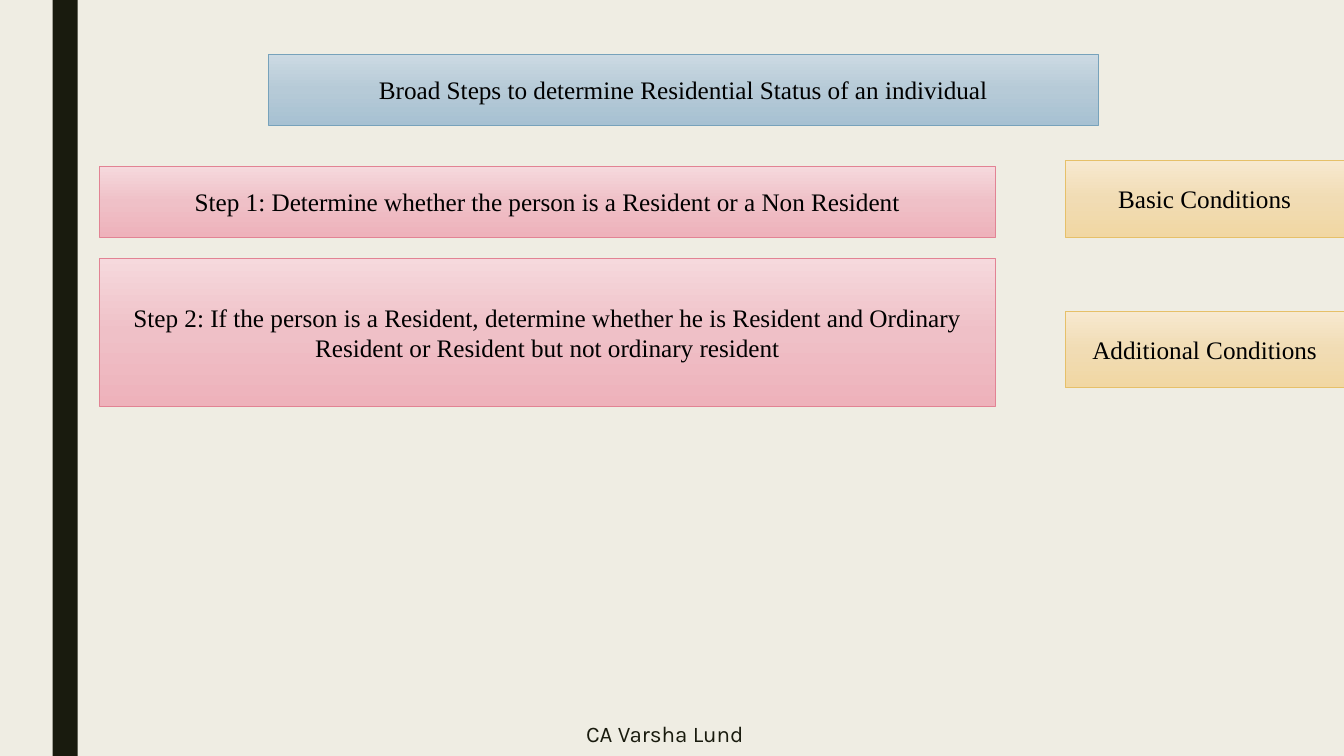
import copy

import pptx
import pptx.dml.color
import pptx.enum.shapes
import pptx.enum.text
import pptx.util
from pptx.oxml.ns import qn

Pt = pptx.util.Pt

SLIDE_SIZE = (960, 540)
BACKGROUND = "EFEDE3"
DARK = "191B0E"

# Three gradient colours from top to bottom, then the outline
BLUE = ("CCDAE3", "B6CAD7", "A7C1D2", "77A2BB")
PINK = ("F6D9DD", "EFC0C7", "EEB2BB", "E28394")
GOLD = ("F7E9D0", "F1DCB4", "F1D7A3", "E6C069")

STEP_LEFT, STEP_WIDTH = 70.75, 640.5
CONDITION_LEFT, CONDITION_HEIGHT = 761, 54.75
CONDITION_WIDTH = SLIDE_SIZE[0] - CONDITION_LEFT

SIDE_BAR = (37.5, 0, 18, SLIDE_SIZE[1])
BOXES = [
    ("Broad Steps to determine Residential Status of an individual",
     (191.5, 38.75, 593.25, 50.75), BLUE),
    ("Step 1: Determine whether the person is a Resident or a Non Resident",
     (STEP_LEFT, 118.75, STEP_WIDTH, 50.75), PINK),
    ("Step 2: If the person is a Resident, determine whether he is Resident "
     "and Ordinary Resident or Resident but not ordinary resident",
     (STEP_LEFT, 184.5, STEP_WIDTH, 105.75), PINK),
    ("Basic Conditions",
     (CONDITION_LEFT, 114.5, CONDITION_WIDTH, CONDITION_HEIGHT), GOLD),
    ("Additional Conditions",
     (CONDITION_LEFT, 222.25, CONDITION_WIDTH, CONDITION_HEIGHT), GOLD),
]
FOOTER = ("CA Varsha Lund", (227.5, 508.5, 494.75, 31.5))

BOX_FONT = {"name": "Times New Roman", "size": Pt(18)}
FOOTER_FONT = {"name": "Karla", "size": Pt(16)}


def paint(colour_format, colour):
    colour_format.rgb = pptx.dml.color.RGBColor.from_string(colour)


def fill_solid(fill, colour):
    fill.solid()
    paint(fill.fore_color, colour)


def fill_gradient(shape, colours):
    """Fill from top to bottom with evenly spaced colours."""
    shape.fill.gradient()
    shape.fill.gradient_angle = 270
    stop_list = shape._element.spPr.find(qn("a:gradFill")).find(qn("a:gsLst"))
    stop_list.append(copy.deepcopy(stop_list[-1]))
    for index, (stop, colour) in enumerate(zip(shape.fill.gradient_stops, colours)):
        stop.position = index / (len(colours) - 1)
        paint(stop.color, colour)


def add_rectangle(slide, place):
    rectangle = slide.shapes.add_shape(
        pptx.enum.shapes.MSO_SHAPE.RECTANGLE, *map(Pt, place))
    rectangle.shadow.inherit = False
    return rectangle


def write(shape, wording, font_values, colour):
    frame = shape.text_frame
    frame.word_wrap = True
    frame.vertical_anchor = pptx.enum.text.MSO_ANCHOR.MIDDLE
    paragraph = frame.paragraphs[0]
    paragraph.alignment = pptx.enum.text.PP_ALIGN.CENTER
    run = paragraph.add_run()
    run.text = wording
    for attribute, value in font_values.items():
        setattr(run.font, attribute, value)
    paint(run.font.color, colour)


def main():
    deck = pptx.Presentation()
    deck.slide_width, deck.slide_height = map(Pt, SLIDE_SIZE)
    slide = deck.slides.add_slide(deck.slide_layouts[6])
    fill_solid(slide.background.fill, BACKGROUND)

    side_bar = add_rectangle(slide, SIDE_BAR)
    fill_solid(side_bar.fill, DARK)
    side_bar.line.fill.background()

    for wording, place, (*gradient, outline) in BOXES:
        box = add_rectangle(slide, place)
        fill_gradient(box, gradient)
        paint(box.line.color, outline)
        box.line.width = Pt(0.5)
        write(box, wording, BOX_FONT, "000000")

    wording, place = FOOTER
    footer = slide.shapes.add_textbox(*map(Pt, place))
    write(footer, wording, FOOTER_FONT, DARK)

    deck.save("out.pptx")


if __name__ == "__main__":
    main()
